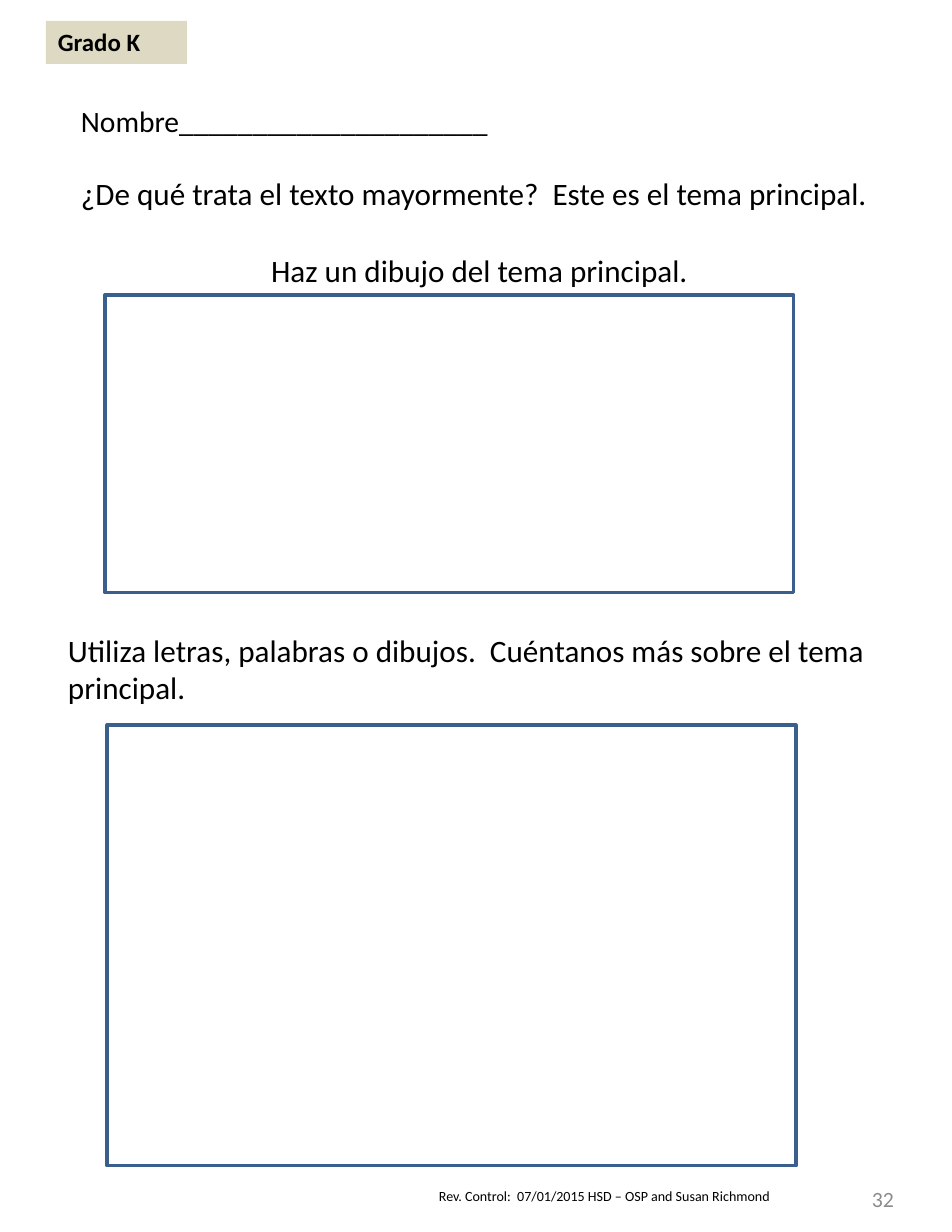
import pptx
import pptx.dml.color
import pptx.enum.shapes
import pptx.enum.text
import pptx.util

PX = pptx.util.Inches(1) // 112
ALIGN = pptx.enum.text.PP_ALIGN
ANCHOR = pptx.enum.text.MSO_ANCHOR

# Boxes are left, top, width, height in px.
GRADE = ("Grado K", (46, 21, 141, 43))
QUESTIONS_BOX = (69, 97, 821, 198)
QUESTIONS = [
    ("Nombre_____________________", {"size": 19}),
    ("¿De qué trata el texto mayormente?  Este es el tema principal.",
     {"size": 20, "before": 23}),
    ("Haz un dibujo del tema principal.",
     {"size": 20, "before": 25.5, "align": ALIGN.CENTER}),
]
DETAILS = ("Utiliza letras, palabras o dibujos.  Cuéntanos más sobre el tema principal.",
           (56, 625, 877, 88))
REVISION = ("Rev. Control:  07/01/2015 HSD – OSP and Susan Richmond",
            (427, 1183, 476, 29))
PAGE_NUMBER = ("32", (803, 1166, 103, 66))
DRAWING_FRAMES = [(105, 295, 689, 298), (107, 725, 689, 441)]


def color(value):
    return pptx.dml.color.RGBColor.from_string(value)


def emu(box):
    return [length * PX for length in box]


def write(paragraph, text, size=20, ink="000000", bold=False, align=ALIGN.LEFT, before=0):
    paragraph.alignment = align
    paragraph.space_before = pptx.util.Pt(before)
    run = paragraph.add_run()
    run.text = text
    run.font.name = "Calibri"
    run.font.size = pptx.util.Pt(size)
    run.font.bold = bold
    run.font.color.rgb = color(ink)


def set_frame(shape, anchor=ANCHOR.TOP, inset=6):
    """Wrap the shape's text, set its anchor and margins, and return its text frame."""
    frame = shape.text_frame
    frame.word_wrap = True
    frame.vertical_anchor = anchor
    frame.margin_left = frame.margin_right = 12 * PX
    frame.margin_top = frame.margin_bottom = inset * PX
    return frame


def add_text(slide, text, box, anchor=ANCHOR.TOP, inset=6, **style):
    frame = set_frame(slide.shapes.add_textbox(*emu(box)), anchor, inset)
    write(frame.paragraphs[0], text, **style)


def add_rectangle(slide, box, fill=None, line=None):
    shape = slide.shapes.add_shape(
        pptx.enum.shapes.MSO_SHAPE.RECTANGLE, *emu(box))
    shape.shadow.inherit = False
    if fill:
        shape.fill.solid()
        shape.fill.fore_color.rgb = color(fill)
    else:
        shape.fill.background()
    if line:
        shape.line.color.rgb = color(line)
        shape.line.width = pptx.util.Pt(2)
    else:
        shape.line.fill.background()
    return shape


def main():
    presentation = pptx.Presentation()
    presentation.slide_width = pptx.util.Inches(8.5)
    presentation.slide_height = pptx.util.Inches(11)
    slide = presentation.slides.add_slide(presentation.slide_layouts[6])

    add_text(slide, *REVISION, size=9, inset=5)
    add_text(slide, *PAGE_NUMBER, anchor=ANCHOR.MIDDLE, size=14, ink="8C8C8C",
             align=ALIGN.RIGHT)

    frame = set_frame(slide.shapes.add_textbox(*emu(QUESTIONS_BOX)))
    for index, (text, style) in enumerate(QUESTIONS):
        paragraph = frame.add_paragraph() if index else frame.paragraphs[0]
        write(paragraph, text, **style)

    grade_text, grade_box = GRADE
    grade = add_rectangle(slide, grade_box, fill="DDD9C3")
    write(set_frame(grade).paragraphs[0], grade_text, size=16, bold=True)

    add_text(slide, *DETAILS)
    for box in DRAWING_FRAMES:
        add_rectangle(slide, box, line="3A5F8C")

    presentation.save("out.pptx")


if __name__ == "__main__":
    main()
